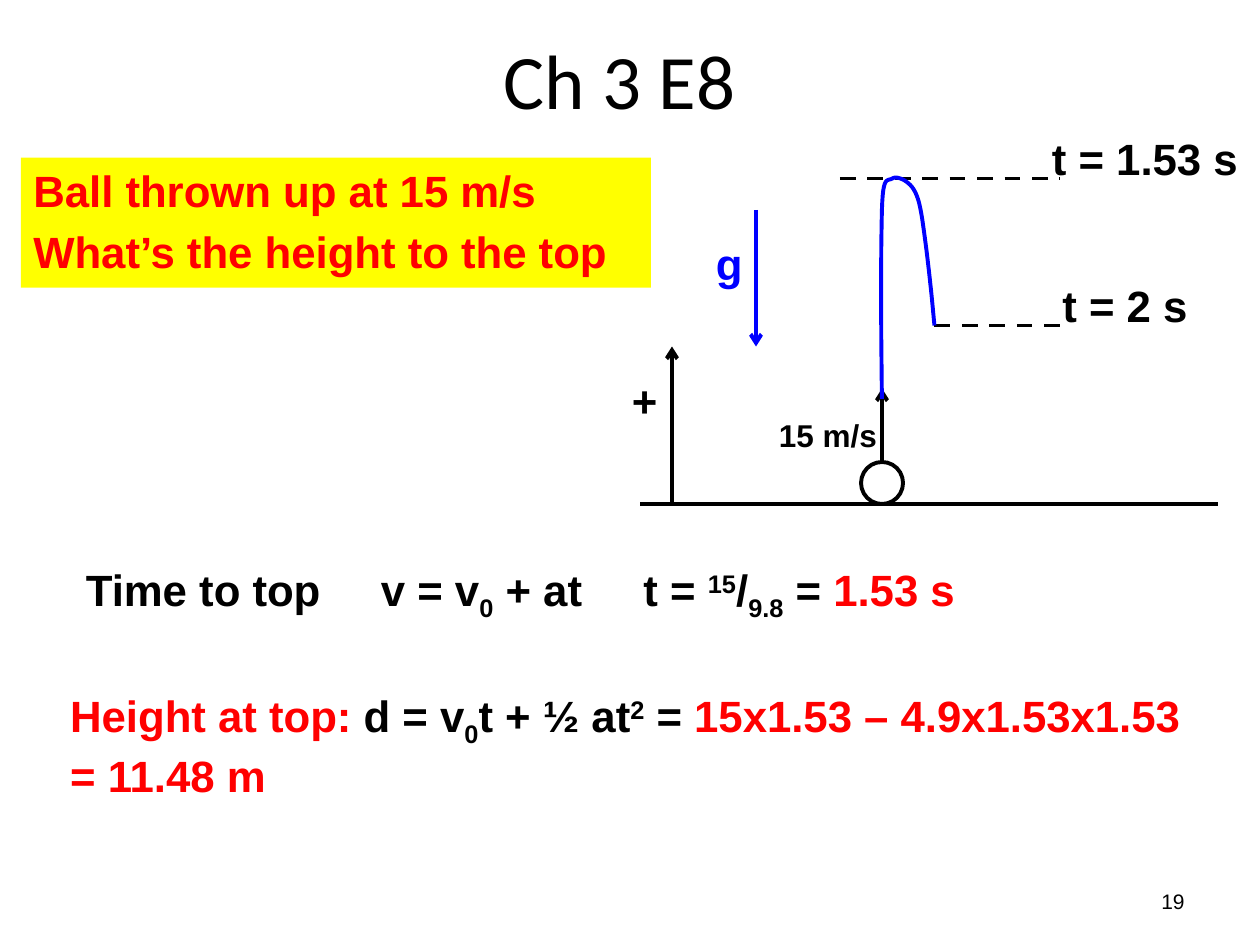
from lxml.etree import SubElement
from pptx import Presentation
from pptx.dml.color import RGBColor
from pptx.enum.dml import MSO_LINE_DASH_STYLE as Dash
from pptx.enum.shapes import MSO_CONNECTOR as Connector, MSO_SHAPE as Shape
from pptx.enum.text import MSO_ANCHOR as Anchor, PP_ALIGN as Align
from pptx.oxml.ns import qn
from pptx.util import Inches, Pt

COLORS = {"black": "000000", "red": "FF0000", "blue": "0000FF", "yellow": "FFFF00"}
SUB, SUPER = "-25000", "30000"

deck = Presentation()
deck.slide_width, deck.slide_height = Inches(10), Inches(7.5)
page = deck.slides.add_slide(deck.slide_layouts[5])
cell = deck.slide_width // 120


def add_text(shapes, area, spans, size=25, bold=True):
    box = shapes.add_textbox(*[round(length * cell) for length in area])
    box.text_frame.word_wrap = True
    para = box.text_frame.paragraphs[0]
    for text, color, baseline in spans:
        span = para.add_run()
        span.text = text
        span.font.name, span.font.size, span.font.bold = "Arial", Pt(size), bold
        span.font.color.rgb = RGBColor.from_string(COLORS[color])
        if baseline:
            span.font._element.set("baseline", baseline)
    return box


def style_line(shape, color):
    shape.line.color.rgb = RGBColor.from_string(COLORS[color])
    shape.line.width = Pt(2.25)
    properties = shape._element.spPr
    if properties.find(qn("a:effectLst")) is None:
        SubElement(properties, qn("a:effectLst"))


title = page.shapes.title
title.left, title.top, title.width, title.height = 5 * cell, 0, 108 * cell, 15 * cell
title.text_frame.vertical_anchor = Anchor.MIDDLE
para = title.text_frame.paragraphs[0]
para.alignment = Align.CENTER
span = para.add_run()
span.text = "Ch 3 E8"
span.font.name, span.font.size = "Calibri", Pt(44)
span.font.color.rgb = RGBColor.from_string(COLORS["black"])

number = add_text(page.shapes, (86, 83.4, 28, 4.8), [("19", "black", None)], 12, False)
number.text_frame.vertical_anchor = Anchor.MIDDLE
number.text_frame.paragraphs[0].alignment = Align.RIGHT

question = page.shapes.add_shape(Shape.RECTANGLE, 2 * cell, 15 * cell, 60 * cell, round(12.4 * cell))
question.shadow.inherit = False
question.fill.solid()
question.fill.fore_color.rgb = RGBColor.from_string(COLORS["yellow"])
question.line.fill.background()
frame = question.text_frame
frame.word_wrap = True
frame.vertical_anchor = Anchor.TOP
for index, text in enumerate(["Ball thrown up at 15 m/s", "What’s the height to the top"]):
    para = frame.add_paragraph() if index else frame.paragraphs[0]
    para.alignment = Align.LEFT
    para.space_before = Pt(5)
    span = para.add_run()
    span.text = text
    span.font.name, span.font.size, span.font.bold = "Arial", Pt(25), True
    span.font.color.rgb = RGBColor.from_string(COLORS["red"])

time_box = add_text(page.shapes, (7, 53, 106, 6.2), [
    ("Time to top\tv = v", "black", None), ("0", "black", SUB),
    (" + at\tt = ", "black", None), ("15", "black", SUPER),
    ("/", "black", None), ("9.8", "black", SUB),
    (" = ", "black", None), ("1.53 s", "red", None),
])
tabs = SubElement(time_box.text_frame.paragraphs[0]._p.get_or_add_pPr(), qn("a:tabLst"))
for column in (28.1, 53.1):
    SubElement(tabs, qn("a:tab"), pos=str(round(column * cell)), algn="l")

diagram = page.shapes.add_group_shape().shapes
for x1, y1, x2, y2, color, ending in [
    (116, 48, 61, 48, "black", None),
    (64, 48, 64, 33, "black", "arrow"),
    (72, 20, 72, 33, "blue", "arrow"),
    (84, 44, 84, 37, "black", "arrow"),
    (80, 17, 101, 17, "black", "dash"),
    (89, 31, 101, 31, "black", "dash"),
]:
    line = diagram.add_connector(Connector.STRAIGHT, x1 * cell, y1 * cell, x2 * cell, y2 * cell)
    style_line(line, color)
    if ending == "dash":
        line.line.dash_style = Dash.DASH
    elif ending == "arrow":
        SubElement(line.line._get_or_add_ln(), qn("a:tailEnd"), type="arrow")

ball = diagram.add_shape(Shape.OVAL, 82 * cell, 44 * cell, 4 * cell, 4 * cell)
ball.fill.background()
style_line(ball, "black")

start = (84, 38)
points = []
for bend in [
    ((83.9, 30.7), (83.9, 23.5), (84, 20)),
    ((84.1, 16.6), (84.5, 17.3), (85, 17)),
    ((85.4, 16.7), (86.5, 17.2), (87, 18)),
    ((87.5, 18.8), (87.7, 19.8), (88, 22)),
    ((88.3, 24.1), (88.7, 27.6), (89, 31)),
]:
    anchors = (start, *bend)
    for step in range(1, 13):
        t = step / 12
        weights = ((1 - t) ** 3, 3 * t * (1 - t) ** 2, 3 * t * t * (1 - t), t ** 3)
        points.append([round(cell * sum(w * a[axis] for w, a in zip(weights, anchors))) for axis in (0, 1)])
    start = bend[-1]
builder = diagram.build_freeform(84 * cell, 38 * cell)
builder.add_line_segments(points, close=False)
flight = builder.convert_to_shape()
flight.fill.background()
style_line(flight, "blue")

for text, color, size, area in [
    ("+", "black", 25, (59, 35, 5, 6.2)),
    ("g", "blue", 25, (67, 22, 5, 6.2)),
    ("15 m/s", "black", 18, (73, 39, 12, 4.8)),
    ("t = 1.53 s", "black", 25, (99, 12, 21, 6.2)),
    ("t = 2 s", "black", 25, (100, 26, 15, 6.2)),
]:
    add_text(diagram, area, [(text, color, None)], size)

add_text(page.shapes, (5.5, 65, 111, 11.3), [
    ("Height at top: ", "red", None), ("d = v", "black", None),
    ("0", "black", SUB), ("t + ½ at", "black", None),
    ("2", "black", SUPER), (" = ", "black", None),
    ("15x1.53 – 4.9x1.53x1.53 = 11.48 m", "red", None),
])

deck.save("out.pptx")
